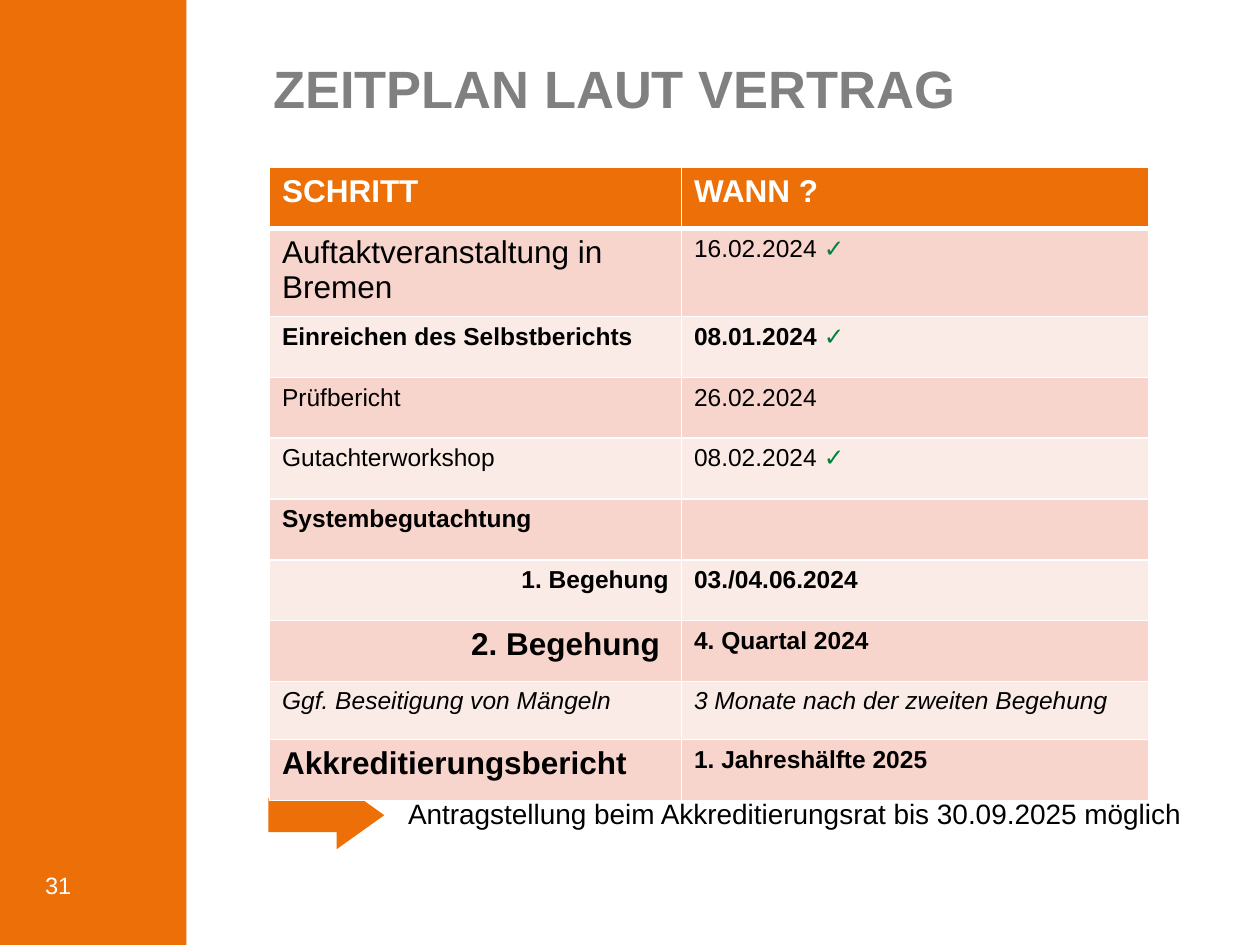
from lxml.etree import SubElement
from pptx import Presentation
from pptx.dml.color import RGBColor
from pptx.enum.shapes import MSO_SHAPE
from pptx.enum.text import MSO_ANCHOR, MSO_AUTO_SIZE, PP_ALIGN
from pptx.oxml.ns import qn
from pptx.util import Pt

ORANGE, GREY, WHITE, BLACK, GREEN = "EC7007", "808080", "FFFFFF", "000000", "00843C"
BANDS = ("F8D5CC", "FBEBE7")
DONE = "✓"
BOLD, ITALIC, LARGE = {"bold": True}, {"italic": True}, {"size": Pt(18)}
LARGE_BOLD = LARGE | BOLD
STEPS = [
    ("Auftaktveranstaltung in Bremen", LARGE, "16.02.2024 ", {}, True),
    ("Einreichen des Selbstberichts", BOLD, "08.01.2024 ", BOLD, True),
    ("Prüfbericht", {}, "26.02.2024", {}, False),
    ("Gutachterworkshop", {}, "08.02.2024 ", {}, True),
    ("Systembegutachtung", BOLD, "", {}, False),
    ("1. Begehung", BOLD, "03./04.06.2024", BOLD, False),
    ("2. Begehung ", LARGE_BOLD, "4. Quartal 2024", BOLD, False),
    ("Ggf. Beseitigung von Mängeln", ITALIC, "3 Monate nach der zweiten Begehung", ITALIC, False),
    ("Akkreditierungsbericht", LARGE_BOLD, "1. Jahreshälfte 2025", BOLD, False),
]


def rgb(value):
    """Turn a hex string into a colour."""
    return RGBColor.from_string(value)


def points(*values):
    """Turn numbers into lengths in points."""
    return [Pt(value) for value in values]


def write(paragraph, text, color=BLACK, **formats):
    """Add a run of Arial text with the given format."""
    run = paragraph.add_run()
    run.text = text
    defaults = {"name": "Arial", "size": Pt(14), "bold": False, "italic": False}
    for key, value in (defaults | formats).items():
        setattr(run.font, key, value)
    run.font.color.rgb = rgb(color)


def add_block(slide, kind, box):
    """Add a flat orange shape."""
    block = slide.shapes.add_shape(kind, *points(*box))
    block.shadow.inherit = False
    block.fill.solid()
    block.fill.fore_color.rgb = rgb(ORANGE)
    block.line.fill.background()
    return block


def add_text(slide, box, text, anchor=MSO_ANCHOR.TOP, **formats):
    """Add a wrapping text box."""
    frame = slide.shapes.add_textbox(*points(*box)).text_frame
    frame.word_wrap = True
    frame.vertical_anchor = anchor
    write(frame.paragraphs[0], text, **formats)


def add_title(slide, box):
    """Place and format the title placeholder."""
    title = slide.shapes.title
    title.left, title.top, title.width, title.height = points(*box)
    frame = title.text_frame
    frame.auto_size = MSO_AUTO_SIZE.NONE
    frame.vertical_anchor = MSO_ANCHOR.TOP
    heading = frame.paragraphs[0]
    heading.alignment = PP_ALIGN.LEFT
    heading.line_spacing = 0.9
    write(heading, "ZEITPLAN LAUT VERTRAG", GREY, size=Pt(30), bold=True)


def add_sidebar(slide, box):
    """Add the side band with the page number near its foot."""
    left, top, width, height = box
    add_block(slide, MSO_SHAPE.RECTANGLE, box)
    number_box = (left + 18.7, top + height - 61.2, 66.2, 38.9)
    add_text(slide, number_box, "31", MSO_ANCHOR.BOTTOM, color=WHITE, size=Pt(13.5))


def style_cell(cell, fill, bottom=1):
    """Give a cell white borders and a fill."""
    properties = cell._tc.get_or_add_tcPr()
    for side, width in {"L": 1, "R": 1, "T": 1, "B": bottom}.items():
        border = SubElement(properties, qn(f"a:ln{side}"), w=str(Pt(width)))
        SubElement(SubElement(border, qn("a:solidFill")), qn("a:srgbClr"), val=WHITE)
    cell.fill.solid()
    cell.fill.fore_color.rgb = rgb(fill)


def add_schedule(slide, box):
    """Add the table of steps and dates."""
    table = slide.shapes.add_table(len(STEPS) + 1, 2, *points(*box)).table
    table.horz_banding = False
    step_width = 235.4
    for column, width in zip(table.columns, (step_width, box[2] - step_width)):
        column.width = Pt(width)
    for row in table.rows:
        row.height = Pt(34.75)
    table.rows[8].height = Pt(33.3)
    for cell, heading in zip(table.rows[0].cells, ("SCHRITT", "WANN ?")):
        style_cell(cell, ORANGE, bottom=3)
        write(cell.text_frame.paragraphs[0], heading, WHITE, **LARGE_BOLD)
    for index, (step, step_format, date, date_format, done) in enumerate(STEPS):
        cells = table.rows[index + 1].cells
        for cell in cells:
            style_cell(cell, BANDS[index % 2])
        step_line, date_line = (cell.text_frame.paragraphs[0] for cell in cells)
        write(step_line, step, **step_format)
        if "Begehung" in step:
            step_line.alignment = PP_ALIGN.RIGHT
        if date:
            write(date_line, date, **date_format)
        if done:
            write(date_line, DONE, GREEN, bold=True)


def add_outlook(slide, box):
    """Add the arrow and the closing remark beside it."""
    left, top, width, height = box
    arrow = add_block(slide, MSO_SHAPE.RIGHT_ARROW, (left, top, 66.2, height))
    arrow.adjustments[1] = 0.7
    remark = "Antragstellung beim Akkreditierungsrat bis 30.09.2025 möglich"
    add_text(slide, (left + 72.7, top + 5, width - 72.7, 26.6), remark, size=Pt(16))


def main():
    """Build and save the slide."""
    deck = Presentation()
    deck.slide_width, deck.slide_height = points(720, 540)
    slide = deck.slides.add_slide(deck.slide_layouts[5])
    add_sidebar(slide, (0, 0, 106.5, 540))
    add_title(slide, (149, 32.4, 553, 99.4))
    add_outlook(slide, (153.4, 446.4, 534.2, 38.9))
    add_schedule(slide, (154, 95.8, 502.6, 346.3))
    deck.save("out.pptx")


if __name__ == "__main__":
    main()
